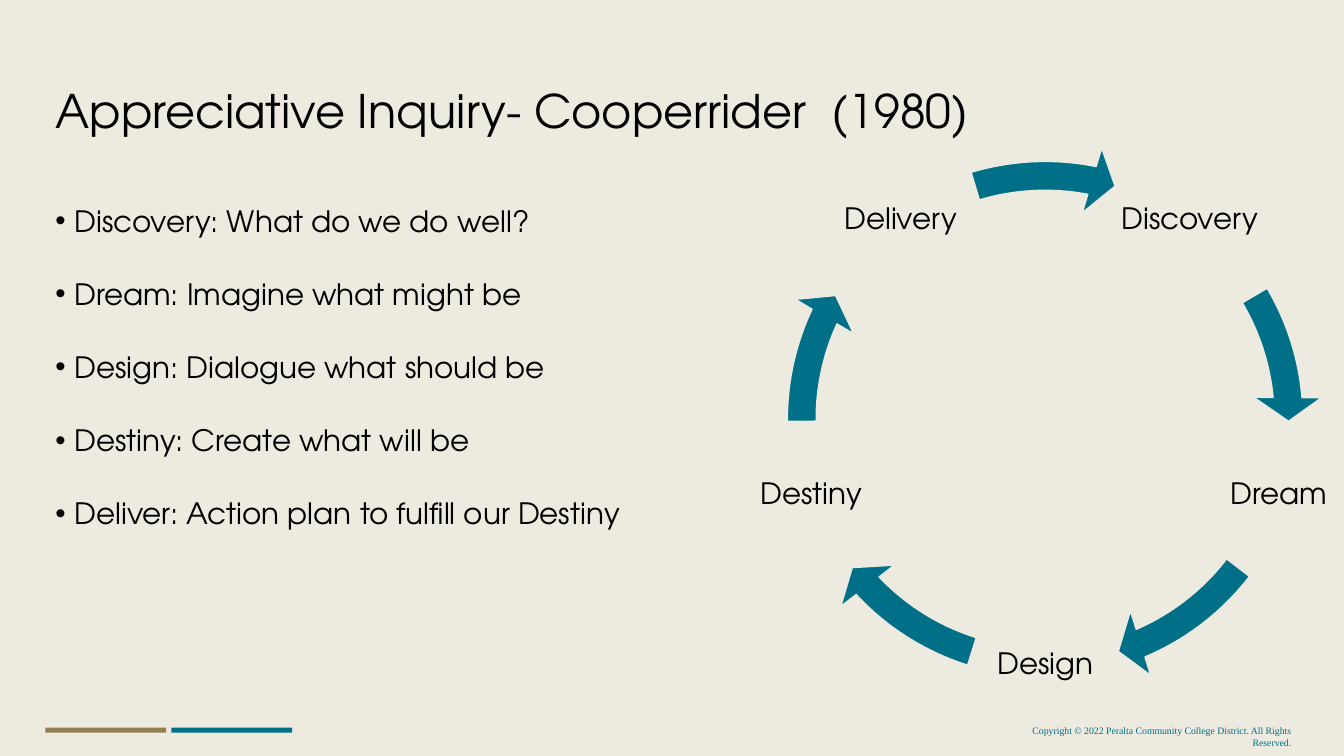
from math import cos, radians, sin

from lxml.etree import SubElement
from pptx import Presentation
from pptx.dml.color import RGBColor
from pptx.enum.shapes import MSO_SHAPE as Preset
from pptx.enum.text import MSO_ANCHOR as Anchor, MSO_AUTO_SIZE as AutoSize, PP_ALIGN as Align
from pptx.oxml.ns import qn
from pptx.util import Pt

COLORS = {"paper": "EDEAE0", "teal": "007088", "bronze": "947D4E", "ink": "000000"}
SANS, SERIF = "TeX Gyre Adventor", "Times New Roman"

QUESTIONS = [
    "Discovery: What do we do well?",
    "Dream: Imagine what might be",
    "Design: Dialogue what should be",
    "Destiny: Create what will be",
    "Deliver: Action plan to fulfill our Destiny",
]
STAGES = [
    ("Discovery", 329.44, 354.88),
    ("Dream", 37.56, 66.91),
    ("Design", 107.5, 136.84),
    ("Destiny", 179.52, 204.96),
    ("Delivery", 253.31, 281.09),
]
CENTER_X, CENTER_Y = 746.6, 299.5
STAGE_RADIUS, STAGE_SIDE, RING_SIDE = 175.7, 105.8, 396


def color(name):
    return RGBColor.from_string(COLORS[name])


class SlideBuilder:
    def __init__(self, slide):
        self.slide = slide
        slide.background.fill.solid()
        slide.background.fill.fore_color.rgb = color("paper")

    def fill_paragraph(self, paragraph, text, size, font=SANS, ink="ink",
                       align=Align.LEFT, spacing=0.9):
        paragraph.alignment = align
        paragraph.line_spacing = spacing
        paragraph.space_before = Pt(0)
        run = paragraph.add_run()
        run.text = text
        run.font.name, run.font.size = font, Pt(size)
        run.font.color.rgb = color(ink)

    def place(self, holder, left, top, width, height, anchor):
        holder.left, holder.top = Pt(left), Pt(top)
        holder.width, holder.height = Pt(width), Pt(height)
        frame = holder.text_frame
        frame.word_wrap = True
        frame.auto_size = AutoSize.NONE
        frame.vertical_anchor = anchor
        return frame

    def title(self, text, *box):
        frame = self.place(self.slide.shapes.title, *box, Anchor.MIDDLE)
        self.fill_paragraph(frame.paragraphs[0], text, 33)

    def bullets(self, items, *box):
        frame = self.place(self.slide.placeholders[1], *box, Anchor.TOP)
        for index, item in enumerate(items):
            paragraph = frame.add_paragraph() if index else frame.paragraphs[0]
            properties = paragraph._p.get_or_add_pPr()
            properties.set("marL", str(Pt(13.5)))
            properties.set("indent", str(Pt(-13.5)))
            SubElement(properties, qn("a:buFont")).set("typeface", "Arial")
            SubElement(properties, qn("a:buChar")).set("char", "•")
            self.fill_paragraph(paragraph, item, 21)
            if index:
                paragraph.space_before = Pt(29.5)

    def text(self, text, *box, inset=None, anchor=Anchor.TOP, **style):
        frame = self.place(self.slide.shapes.add_textbox(0, 0, 0, 0), *box, anchor)
        if inset is not None:
            frame.margin_left = frame.margin_right = Pt(inset)
            frame.margin_top = frame.margin_bottom = Pt(inset)
        self.fill_paragraph(frame.paragraphs[0], text, **style)

    def shape(self, preset, fill, left, top, width, height):
        shape = self.slide.shapes.add_shape(preset, Pt(left), Pt(top), Pt(width), Pt(height))
        shape.shadow.inherit = False
        shape.fill.solid()
        shape.fill.fore_color.rgb = color(fill)
        shape.line.fill.background()
        return shape

    def arc_arrow(self, start, end):
        arrow = self.shape(Preset.CIRCULAR_ARROW, "teal", CENTER_X - RING_SIDE / 2,
                           CENTER_Y - RING_SIDE / 2, RING_SIDE, RING_SIDE)
        arrow.line.color.rgb = color("paper")
        arrow.line.width = Pt(1)
        for index, value in enumerate((0.052, 3.36, end * 0.6, start * 0.6, 0.061)):
            arrow.adjustments[index] = value

    def cycle(self, stages):
        step = 360 / len(stages)
        for index, (stage, start, end) in enumerate(stages):
            angle = radians(-90 + step * (index + 0.5))
            left = CENTER_X + STAGE_RADIUS * cos(angle) - STAGE_SIDE / 2
            top = CENTER_Y + STAGE_RADIUS * sin(angle) - STAGE_SIDE / 2
            self.text(stage, left, top, STAGE_SIDE, STAGE_SIDE, inset=2,
                      anchor=Anchor.MIDDLE, size=21, align=Align.CENTER)
            self.arc_arrow(start, end)


def main():
    deck = Presentation()
    deck.slide_width, deck.slide_height = Pt(960), Pt(540)
    builder = SlideBuilder(deck.slides.add_slide(deck.slide_layouts[1]))
    builder.text("Copyright © 2022 Peralta Community College District. All Rights Reserved.",
                 701.3, 514.1, 228.2, 15.1, size=7, font=SERIF, ink="teal",
                 align=Align.RIGHT, spacing=1.0)
    for fill, left in (("teal", 122.4), ("bronze", 32.4)):
        builder.shape(Preset.RECTANGLE, fill, left, 519.8, 86.4, 3.6)
    builder.title("Appreciative Inquiry- Cooperrider  (1980)", 32.4, 28.8, 874.8, 104.4)
    builder.bullets(QUESTIONS, 32.4, 144, 874.8, 342.7)
    builder.cycle(STAGES)
    deck.save("out.pptx")


if __name__ == "__main__":
    main()
